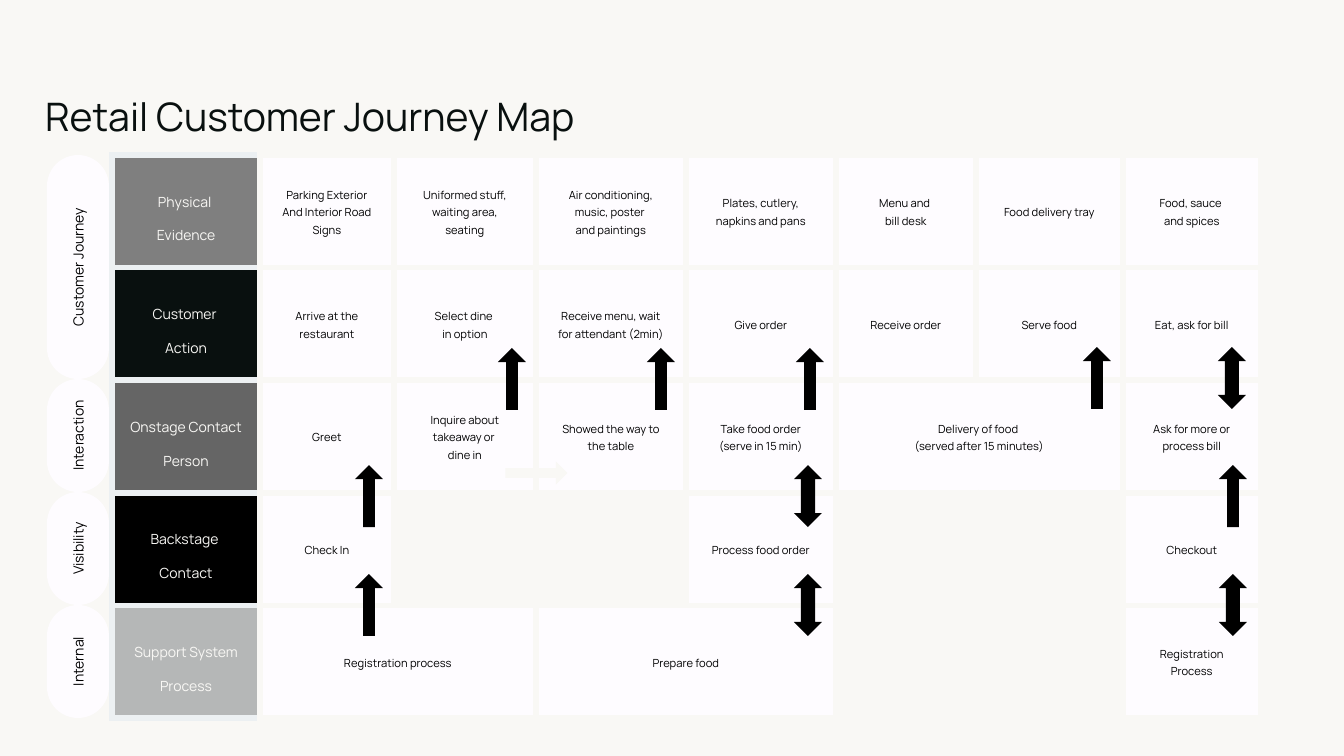
"""Build a one-slide retail customer journey map."""
from dataclasses import dataclass
from typing import Optional

from lxml import etree
from pptx import Presentation
from pptx import util as u
from pptx.dml import color
from pptx.enum import shapes, text
from pptx.oxml import ns

SCALE = 914400 / 100.8
FONT = "Manrope"
HUES = {
    "ground": "F9F8F5", "card": "FEFCFF", "rim": "ECF0F2", "ink": "09100F",
    "black": "000000", "mid": "7F7F7F", "dark": "656565", "pale": "B5B7B7",
}
LEFT, TOP, TALL = 112, 155, 563
COLS = (148, 134, 142, 150, 150, 140, 147, 138)
PILL = 62
UP, BOTH = shapes.MSO_SHAPE.DOWN_ARROW, shapes.MSO_SHAPE.UP_DOWN_ARROW
STEM = {UP: 0.417, BOTH: 0.363}


@dataclass
class Stage:
    """A table row; None in steps widens the cell before it."""
    name: str
    hue: str
    steps: tuple[Optional[str], ...]


@dataclass
class Arrow:
    """A block arrow, given by its unturned box."""
    left: int
    top: int
    kind: shapes.MSO_SHAPE = UP
    turn: int = 180
    wide: int = 28
    hue: str = "black"


@dataclass
class Pill:
    """An upright label beside the table."""
    name: str
    tall: int = 113


STAGES = (
    Stage("Physical \nEvidence", "mid", (
        "Parking Exterior And Interior Road Signs", "Uniformed stuff, waiting area, seating",
        "Air conditioning, music, poster \nand paintings", "Plates, cutlery, napkins and pans",
        "Menu and \nbill desk", "Food delivery tray", "Food, sauce \nand spices")),
    Stage("Customer \nAction", "ink", (
        "Arrive at the restaurant", "Select dine \nin option",
        "Receive menu, wait for attendant (2min)", "Give order",
        "Receive order", "Serve food", "Eat, ask for bill")),
    Stage("Onstage Contact Person", "dark", (
        "Greet", "Inquire about takeaway or \ndine in", "Showed the way to the table",
        "Take food order (serve in 15 min)",
        "Delivery of food \n(served after 15 minutes)", None, "Ask for more or process bill")),
    Stage("Backstage \nContact", "black", (
        "Check In", "", "", "Process food order", "", "", "Checkout")),
    Stage("Support System\nProcess", "pale", (
        "Registration process", None, "Prepare food", None, "", "", "Registration Process")),
)
ARROWS = (
    Arrow(794, 574, BOTH), Arrow(355, 574), Arrow(1219, 574, BOTH),
    Arrow(355, 465), Arrow(525, 442, turn=270, wide=23, hue="ground"),
    Arrow(794, 465, BOTH), Arrow(1219, 465),
    Arrow(498, 348), Arrow(647, 348), Arrow(796, 348),
    Arrow(1083, 347), Arrow(1218, 347, BOTH),
)
PILLS = (Pill("Customer Journey", 224), Pill("Interaction"), Pill("Visibility"), Pill("Internal"))


def px(size: float) -> int:
    """Turn px into EMU."""
    return round(size * SCALE)


def paint(fill, hue: str) -> None:
    """Set a solid fill."""
    fill.solid()
    fill.fore_color.rgb = color.RGBColor.from_string(HUES[hue])


def write(frame, words: str, size: int, hue: str, space: Optional[float] = None,
          align=text.PP_ALIGN.CENTER) -> None:
    """Put styled text in a frame."""
    frame.text = words
    frame.word_wrap = True
    for line in frame.paragraphs:
        line.alignment = align
        if space:
            line.line_spacing = space
        for run in line.runs:
            run.font.name = FONT
            run.font.size = u.Pt(size)
            run.font.color.rgb = color.RGBColor.from_string(HUES[hue])


def inset(item, side: int, end: int) -> None:
    """Set the margins of a cell or text frame."""
    item.margin_left = item.margin_right = px(side)
    item.margin_top = item.margin_bottom = px(end)


def edge(cell, rim: str) -> None:
    """Draw cell borders; the right one always has the ground hue."""
    props = cell._tc.get_or_add_tcPr()
    for side in "LRTB":
        line = etree.SubElement(props, ns.qn(f"a:ln{side}"), w=str(u.Pt(4.5)))
        solid = etree.SubElement(line, ns.qn("a:solidFill"))
        hue = "ground" if side == "R" else rim
        etree.SubElement(solid, ns.qn("a:srgbClr"), val=HUES[hue])


def add_grid(slide) -> None:
    """Draw the table of stages."""
    grid = slide.shapes.add_table(
        len(STAGES), len(COLS), px(LEFT), px(TOP), px(sum(COLS)), px(TALL)).table
    grid.first_row = grid.horz_banding = False
    for col, wide in zip(grid.columns, COLS):
        col.width = px(wide)
    for row, stage in enumerate(STAGES):
        grid.rows[row].height = px(TALL / len(STAGES))
        for col, words in enumerate((stage.name, *stage.steps)):
            cell = grid.cell(row, col)
            head = col == 0
            edge(cell, "rim" if head else "ground")
            paint(cell.fill, stage.hue if head else "ground" if words == "" else "card")
            if words is None:
                grid.cell(row, col - 1).merge(cell)
                continue
            cell.vertical_anchor = text.MSO_ANCHOR.MIDDLE
            inset(cell, *((5, 2) if head else (20, 0)))
            if head:
                write(cell.text_frame, words, 10, "ground", 1.78)
            elif words:
                write(cell.text_frame, words, 8, "black", 1.15)


def add_block(slide, kind, box: tuple[float, ...], turn: int, hue: str):
    """Draw a flat turned shape."""
    block = slide.shapes.add_shape(kind, *map(px, box))
    block.rotation = turn
    block.shadow.inherit = False
    block.line.fill.background()
    paint(block.fill, hue)
    return block


def add_arrow(slide, arrow: Arrow) -> None:
    """Draw one arrow."""
    block = add_block(slide, arrow.kind, (arrow.left, arrow.top, arrow.wide, 62),
                      arrow.turn, arrow.hue)
    block.adjustments[0] = STEM[arrow.kind]
    block.adjustments[1] = 0.5


def add_pill(slide, pill: Pill, top: int) -> None:
    """Draw one upright label."""
    box = (78 - pill.tall / 2, top + (pill.tall - PILL) / 2, pill.tall, PILL)
    block = add_block(slide, shapes.MSO_SHAPE.ROUNDED_RECTANGLE, box, 270, "card")
    block.adjustments[0] = 0.5
    inset(block.text_frame, 0, 0)
    block.text_frame.vertical_anchor = text.MSO_ANCHOR.MIDDLE
    write(block.text_frame, pill.name, 10, "black")


def add_title(slide) -> None:
    """Draw the heading."""
    box = slide.shapes.add_textbox(px(45), px(92), px(930), px(51))
    paint(box.fill, "ground")
    inset(box.text_frame, 0, 0)
    write(box.text_frame, "Retail Customer Journey Map", 28, "ink", align=text.PP_ALIGN.LEFT)


def main() -> None:
    """Build and save the slide."""
    deck = Presentation()
    deck.slide_width, deck.slide_height = px(1344), px(756)
    slide = deck.slides.add_slide(deck.slide_layouts[6])
    paint(slide.background.fill, "ground")
    add_grid(slide)
    for arrow in ARROWS:
        add_arrow(slide, arrow)
    top = TOP
    for pill in PILLS:
        add_pill(slide, pill, top)
        top += pill.tall
    add_title(slide)
    deck.save("out.pptx")


if __name__ == "__main__":
    main()
